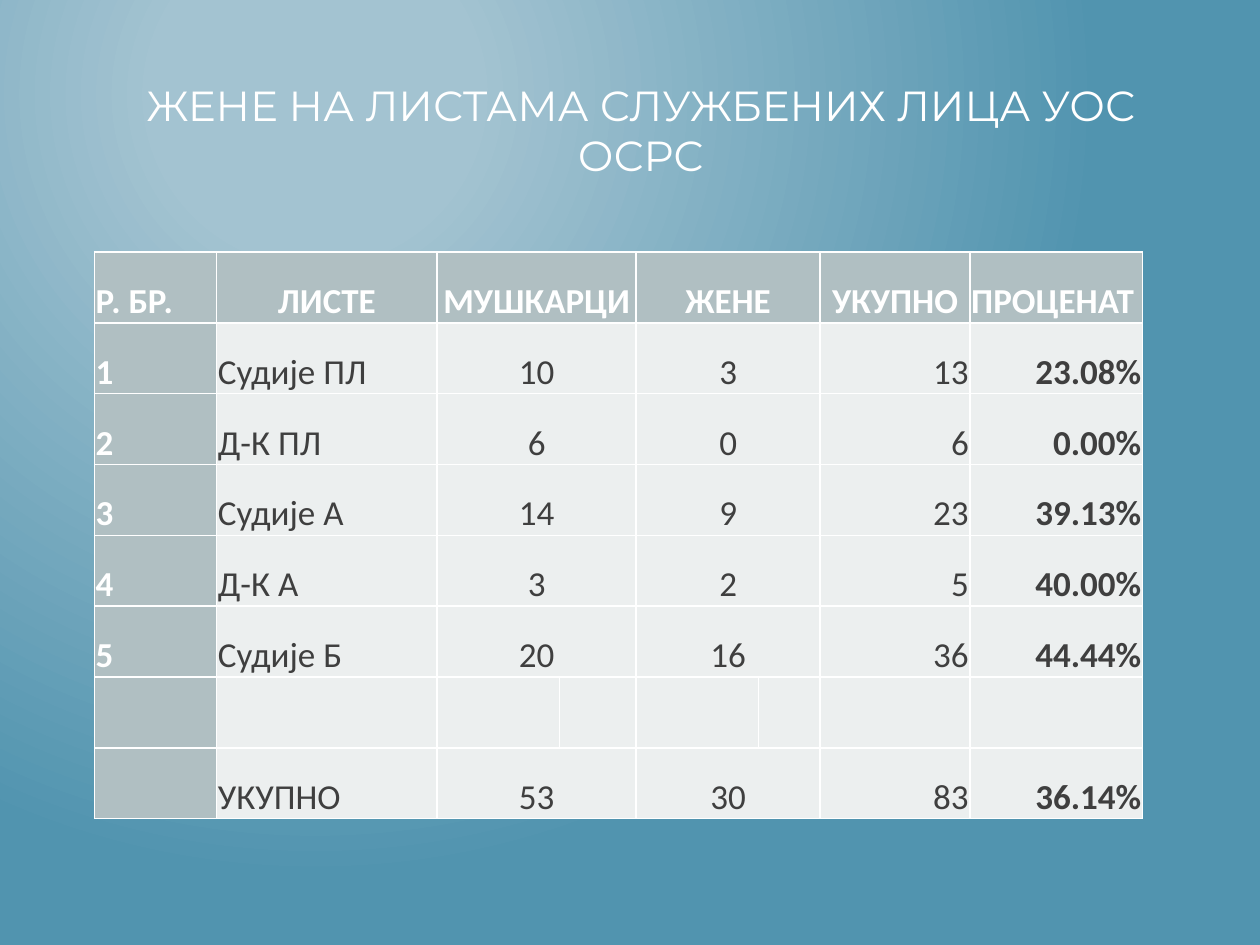
import lxml.etree
import pptx
import pptx.dml.color
import pptx.enum.text
import pptx.oxml.ns
import pptx.util

WIDTH, HEIGHT = 10, 7.5
WHITE, DARK, HEADER, BODY = "FFFFFF", "3F3F3F", "B0BFC2", "ECEFEF"
ALIGN = pptx.enum.text.PP_ALIGN
HEADINGS = ["Р. БР.", "ЛИСТЕ", "МУШКАРЦИ", "ЖЕНЕ", "УКУПНО", "ПРОЦЕНАТ"]
LISTS = [("Судије ПЛ", 10, 3), ("Д-К ПЛ", 6, 0), ("Судије А", 14, 9),
         ("Д-К А", 3, 2), ("Судије Б", 20, 16)]
COLUMN_WIDTHS = [0.97, 1.75, 0.97, 0.61, 0.97, 0.49, 1.19, 1.37]
FIELD_COLUMNS = [0, 1, 2, 4, 6, 7]
PAIRED_COLUMNS = [2, 4]
HEADING_ALIGNS = [ALIGN.LEFT] + [ALIGN.CENTER] * 4 + [ALIGN.LEFT]
BODY_ALIGNS = [ALIGN.LEFT] * 2 + [ALIGN.CENTER] * 2 + [ALIGN.RIGHT] * 2


def inches(value):
    return pptx.util.Inches(value)


def color(value):
    return pptx.dml.color.RGBColor.from_string(value)


def add_child(parent, tag, **attributes):
    return lxml.etree.SubElement(parent, pptx.oxml.ns.qn(tag), **attributes)


def paint_background(slide):
    fill = slide.background.fill
    fill.gradient()
    for stop, position, tint in zip(fill.gradient_stops, (0.2, 1), ("A3C3D1", "5194AF")):
        stop.position = position
        stop.color.rgb = color(tint)
    gradient = next(slide.element.iter(pptx.oxml.ns.qn("a:gradFill")))
    gradient.remove(gradient.find(pptx.oxml.ns.qn("a:lin")))
    circle = add_child(gradient, "a:path", path="circle")
    add_child(circle, "a:fillToRect", l="50000", t="20000", r="100000", b="100000")


def style(paragraph, font, size, tint, align, bold=False):
    paragraph.alignment = align
    paragraph.font.name = font
    paragraph.font.size = pptx.util.Pt(size)
    paragraph.font.color.rgb = color(tint)
    paragraph.font.bold = bold


def add_title(slide, text):
    title = slide.shapes.add_textbox(
        inches(WIDTH * 0.1), inches(0.58), inches(8.17), inches(1.25)).text_frame
    title.word_wrap = True
    title.margin_left = title.margin_right = 0
    title.text = text
    style(title.paragraphs[0], "Montserrat", 24, WHITE, ALIGN.CENTER)


def border(cell):
    properties = cell._tc.get_or_add_tcPr()
    for side in "LRTB":
        line = add_child(properties, f"a:ln{side}", w=str(pptx.util.Pt(1)))
        add_child(add_child(line, "a:solidFill"), "a:srgbClr", val=WHITE)


def format_cell(cell, fill):
    border(cell)
    cell.fill.solid()
    cell.fill.fore_color.rgb = color(fill)
    cell.vertical_anchor = pptx.enum.text.MSO_ANCHOR.BOTTOM
    cell.margin_left = cell.margin_right = cell.margin_top = inches(0.01)
    cell.margin_bottom = 0


def counted(number, name, men, women):
    total = men + women
    return [number, name, str(men), str(women), str(total), f"{women / total:.2%}"]


def table_rows():
    rows = [counted(str(number), *entry) for number, entry in enumerate(LISTS, 1)]
    men, women = (sum(entry[i] for entry in LISTS) for i in (1, 2))
    return [HEADINGS, *rows, None, counted("", "УКУПНО", men, women)]


def fill_row(table, row, fields):
    aligns = BODY_ALIGNS if row else HEADING_ALIGNS
    for column, text, align in zip(FIELD_COLUMNS, fields, aligns):
        cell = table.cell(row, column)
        if column in PAIRED_COLUMNS:
            cell.merge(table.cell(row, column + 1))
        cell.text = text
        heading = row == 0 or column == 0
        style(cell.text_frame.paragraphs[0], "Calibri", 20,
              WHITE if heading else DARK, align, heading or column == FIELD_COLUMNS[-1])


def add_counts_table(slide):
    rows = table_rows()
    height = HEIGHT * 0.6
    table = slide.shapes.add_table(
        len(rows), len(COLUMN_WIDTHS), inches(0.75), inches(2),
        inches(sum(COLUMN_WIDTHS)), inches(height)).table
    table.first_row = table.horz_banding = False
    for column, width in zip(table.columns, COLUMN_WIDTHS):
        column.width = inches(width)
    for row, fields in enumerate(rows):
        table.rows[row].height = inches(height / len(rows))
        for column in range(len(COLUMN_WIDTHS)):
            format_cell(table.cell(row, column), HEADER if row == 0 or column == 0 else BODY)
        if fields:
            fill_row(table, row, fields)


def main():
    deck = pptx.Presentation()
    deck.slide_width, deck.slide_height = inches(WIDTH), inches(HEIGHT)
    slide = deck.slides.add_slide(deck.slide_layouts[6])
    paint_background(slide)
    add_title(slide, "ЖЕНЕ НА ЛИСТАМА СЛУЖБЕНИХ ЛИЦА УОС ОСРС")
    add_counts_table(slide)
    deck.save("out.pptx")


if __name__ == "__main__":
    main()
